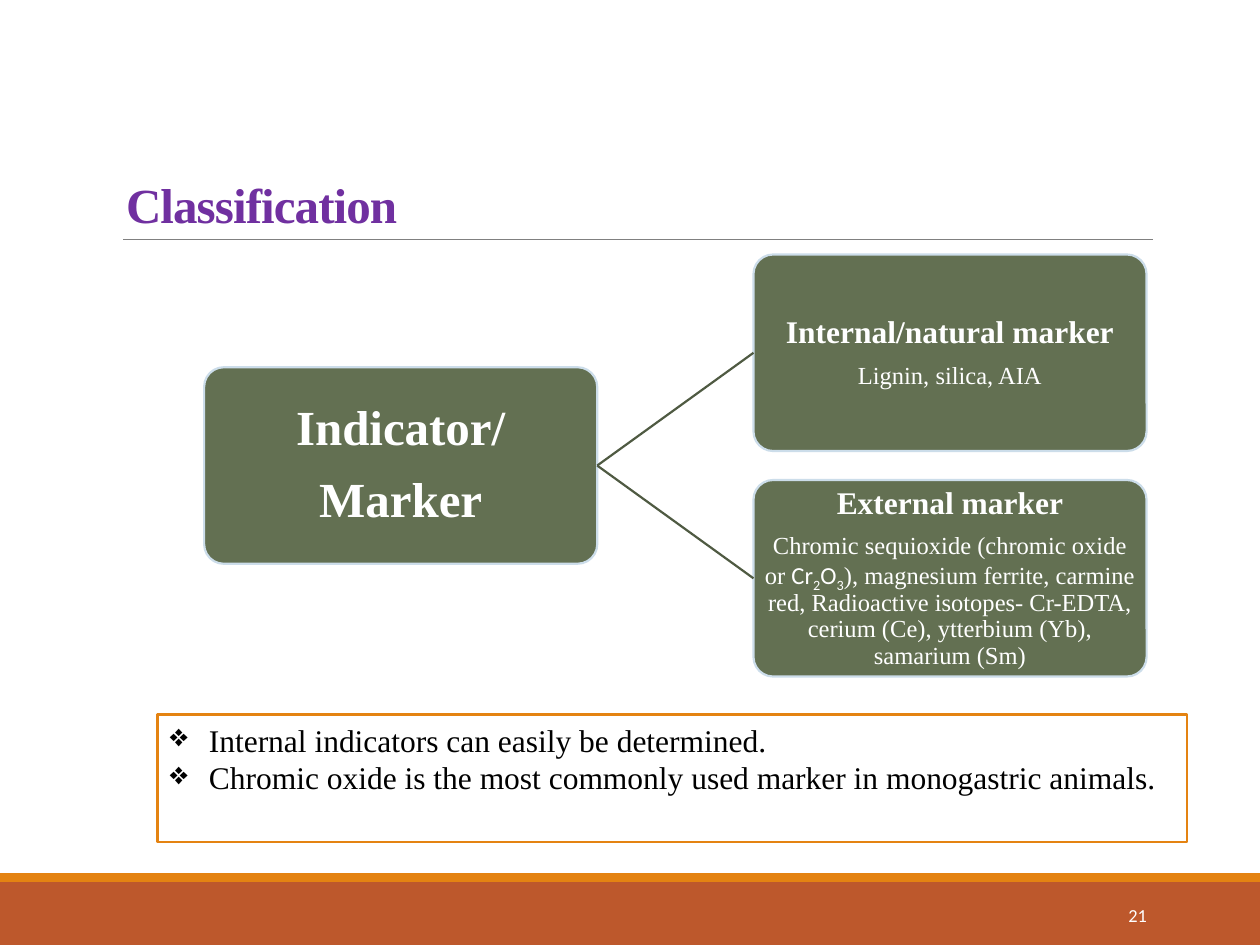
from lxml import etree
from pptx import Presentation
from pptx.dml.color import RGBColor
from pptx.enum import shapes, text
from pptx.oxml import ns
from pptx.util import Inches, Pt

COLORS = {
    "footer": "BD582C", "accent": "E48312", "rule": "808080", "title": "7030A0",
    "node": "637052", "node_line": "CCDDEA", "link": "4F5A42",
    "white": "FFFFFF", "black": "000000",
}
SERIF, SANS = "Times New Roman", "Calibri"
NODE_WIDTH, NODE_HEIGHT = 3.12, 1.56


def color(name):
    return RGBColor.from_string(COLORS[name])


def add_run(paragraph, wording, size, fill, font=SERIF, bold=False, baseline=0):
    run = paragraph.add_run()
    run.text = wording
    run.font.name = font
    run.font.size = Pt(size)
    run.font.bold = bold
    run.font.color.rgb = color(fill)
    if baseline:
        run.font._element.set("baseline", str(baseline * 1000))
    return run


def set_margins(frame, margin):
    frame.margin_left = frame.margin_right = Inches(margin)
    frame.margin_top = frame.margin_bottom = Inches(margin)


def add_box(slide, kind, left, top, width, height, fill, line=None):
    shape = slide.shapes.add_shape(
        kind, Inches(left), Inches(top), Inches(width), Inches(height))
    shape.shadow.inherit = False
    shape.fill.solid()
    shape.fill.fore_color.rgb = color(fill)
    if line:
        shape.line.color.rgb = color(line)
        shape.line.width = Pt(1.25)
    else:
        shape.line.fill.background()
    return shape


def add_line(slide, start, end, line, width):
    connector = slide.shapes.add_connector(
        shapes.MSO_CONNECTOR.STRAIGHT, *(Inches(value) for value in start + end))
    connector.line.color.rgb = color(line)
    connector.line.width = Pt(width)
    etree.SubElement(connector._element.spPr, ns.qn("a:effectLst"))
    return connector


def add_footer(slide, left, top, width, height):
    """Two-tone band along the bottom with the slide number."""
    stripe = 0.07
    rectangle = shapes.MSO_SHAPE.RECTANGLE
    add_box(slide, rectangle, left, top + stripe, width, height - stripe, "footer")
    add_box(slide, rectangle, left, top, width, stripe, "accent")
    number = slide.shapes.add_textbox(
        Inches(left + 8.12), Inches(top + 0.13), Inches(1.08), Inches(0.4))
    frame = number.text_frame
    frame.word_wrap = True
    frame.vertical_anchor = text.MSO_ANCHOR.MIDDLE
    paragraph = frame.paragraphs[0]
    paragraph.alignment = text.PP_ALIGN.RIGHT
    add_run(paragraph, "21", 10.5, "white", SANS)


def add_title(slide, left, top, width, height):
    """Title placeholder with a thin rule under it."""
    title = slide.shapes.title
    title.left, title.top = Inches(left), Inches(top)
    title.width, title.height = Inches(width), Inches(height)
    frame = title.text_frame
    frame.word_wrap = True
    frame.auto_size = text.MSO_AUTO_SIZE.NONE
    frame.vertical_anchor = text.MSO_ANCHOR.BOTTOM
    paragraph = frame.paragraphs[0]
    paragraph.alignment = text.PP_ALIGN.LEFT
    paragraph.line_spacing = 0.85
    run = add_run(paragraph, "Classification", 28, "title", bold=True)
    run.font._element.set("spc", "-50")
    bottom = top + height
    add_line(slide, (left + 0.08, bottom), (left + width, bottom), "rule", 0.5)


def add_node(slide, left, top, margin, paragraphs):
    """Rounded box; each paragraph is (size, bold, [(wording, font, baseline)])."""
    node = add_box(slide, shapes.MSO_SHAPE.ROUNDED_RECTANGLE, left, top,
                   NODE_WIDTH, NODE_HEIGHT, "node", "node_line")
    node.adjustments[0] = 0.1
    frame = node.text_frame
    frame.word_wrap = True
    frame.vertical_anchor = text.MSO_ANCHOR.MIDDLE
    set_margins(frame, margin)
    for index, (size, bold, runs) in enumerate(paragraphs):
        paragraph = frame.add_paragraph() if index else frame.paragraphs[0]
        paragraph.alignment = text.PP_ALIGN.CENTER
        paragraph.line_spacing = 0.9
        paragraph.space_after = Pt(round(size * 0.4, 1))
        for wording, font, baseline in runs:
            add_run(paragraph, wording, size, "white", font, bold, baseline)
    return node


def add_hierarchy(slide, left, top):
    """Root node on the left, joined to two stacked marker nodes."""
    row_step, column_step = 1.79, 4.36
    root = add_node(slide, left, top + row_step / 2, 0.02, [
        (28, True, [("Indicator/", SERIF, 0)]),
        (28, True, [("Marker", SERIF, 0)]),
    ])
    branches = [
        ("Internal/natural marker", [("Lignin, silica, AIA", SERIF, 0)]),
        ("External marker", [
            ("Chromic sequioxide (chromic oxide or ", SERIF, 0),
            ("Cr", SANS, 0), ("2", SANS, -25), ("O", SANS, 0), ("3", SANS, -25),
            ("), magnesium ferrite, carmine red, Radioactive isotopes- Cr-EDTA, "
             "cerium (Ce), ytterbium (Yb), samarium (Sm)", SERIF, 0),
        ]),
    ]
    for row, (heading, examples) in enumerate(branches):
        branch = add_node(slide, left + column_step, top + row * row_step, 0.01, [
            (18, True, [(heading, SERIF, 0)]),
            (14, False, examples),
        ])
        link = add_line(slide, (0, 0), (1, 1), "link", 1.25)
        link.begin_connect(root, 3)
        link.end_connect(branch, 1)


def add_notes_box(slide, left, top, width, height):
    """Outlined box of bulleted remarks."""
    box = add_box(slide, shapes.MSO_SHAPE.RECTANGLE, left, top, width, height,
                  "white", "accent")
    frame = box.text_frame
    frame.word_wrap = True
    frame.vertical_anchor = text.MSO_ANCHOR.TOP
    remarks = [
        "Internal indicators can easily be determined.",
        "Chromic oxide is the most commonly used marker in monogastric animals.",
    ]
    for index, remark in enumerate(remarks):
        paragraph = frame.add_paragraph() if index else frame.paragraphs[0]
        paragraph.alignment = text.PP_ALIGN.LEFT
        properties = paragraph._p.get_or_add_pPr()
        properties.set("marL", str(Inches(0.31)))
        properties.set("indent", str(Inches(-0.31)))
        etree.SubElement(properties, ns.qn("a:buChar")).set("char", "❖")
        add_run(paragraph, remark, 18, "black")


def main():
    presentation = Presentation()
    presentation.slide_width, presentation.slide_height = Inches(10), Inches(7.5)
    slide = presentation.slides.add_slide(presentation.slide_layouts[5])
    add_footer(slide, 0, 6.93, 10, 0.57)
    add_title(slide, 0.9, 1.37, 8.25, 0.53)
    add_hierarchy(slide, 1.62, 2.02)
    add_notes_box(slide, 1.25, 5.67, 8.17, 1.01)
    presentation.save("out.pptx")


if __name__ == "__main__":
    main()
